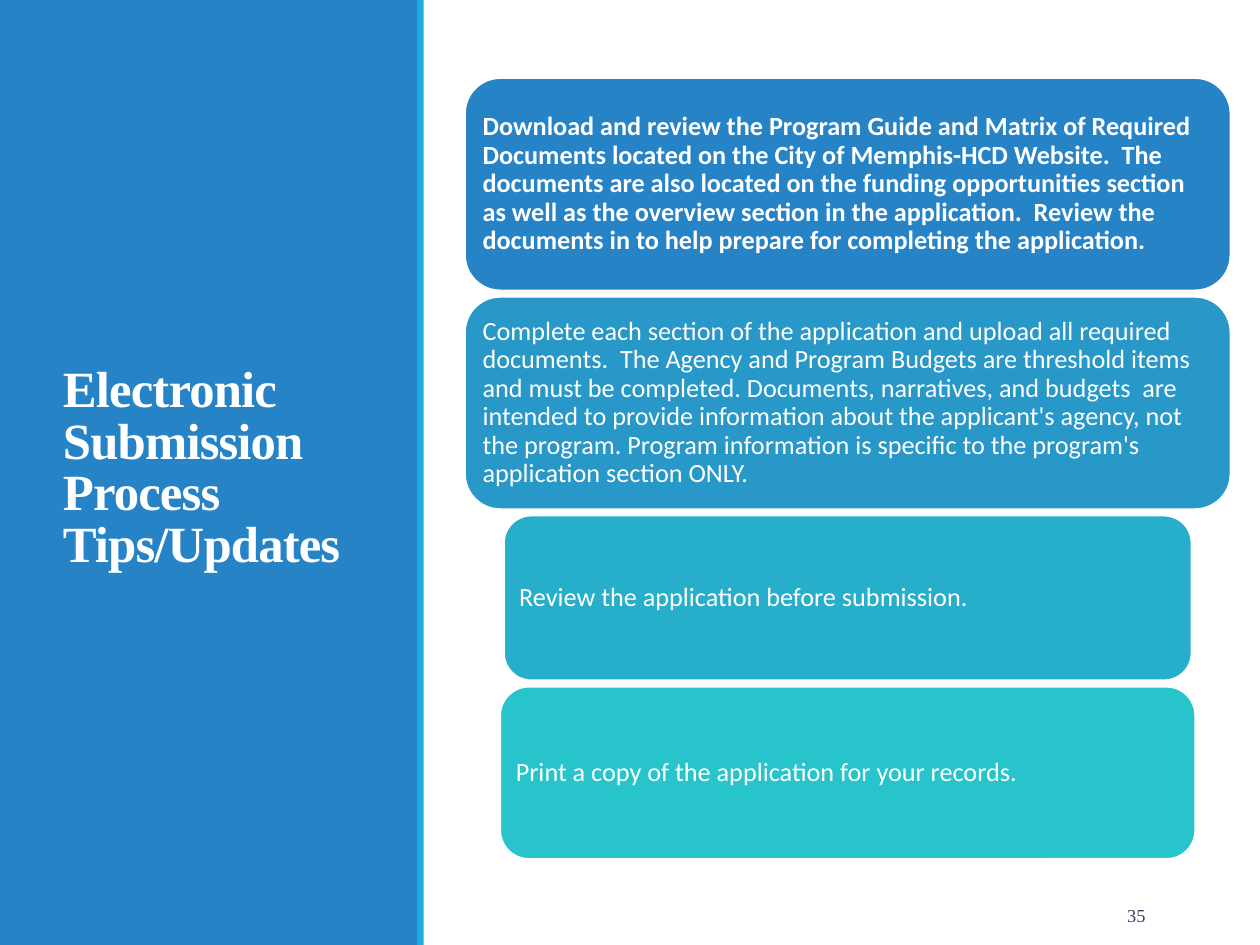
from pptx import Presentation
from pptx.dml.color import RGBColor
from pptx.enum.shapes import MSO_SHAPE
from pptx.enum.text import MSO_ANCHOR, PP_ALIGN
from pptx.util import Cm, Pt

RECTANGLE = MSO_SHAPE.RECTANGLE
ROUNDED = MSO_SHAPE.ROUNDED_RECTANGLE
MIDDLE = MSO_ANCHOR.MIDDLE
LEFT, RIGHT = PP_ALIGN.LEFT, PP_ALIGN.RIGHT

COLOURS = {
    "white": "FFFFFF",
    "panel": "2683C6",
    "stripe": "1CADE4",
    "number": "344068",
    "step1": "2683C6",
    "step2": "2798C8",
    "step3": "27AECA",
    "step4": "28C4CC",
}
SERIF, SANS = "Times New Roman", "Calibri"

# Steps: width, height, bold, text
STEPS = [
    (15.44, 4.29, True,
     "Download and review the Program Guide and Matrix of Required Documents "
     "located on the City of Memphis-HCD Website.  The documents are also "
     "located on the funding opportunities section as well as the overview "
     "section in the application.  Review the documents in to help prepare "
     "for completing the application."),
    (15.44, 4.29, False,
     "Complete each section of the application and upload all required "
     "documents.  The Agency and Program Budgets are threshold items and must "
     "be completed. Documents, narratives, and budgets  are intended to "
     "provide information about the applicant's agency, not the program. "
     "Program information is specific to the program's application section "
     "ONLY."),
    (13.87, 3.33, False, "Review the application before submission."),
    (14.02, 3.48, False, "Print a copy of the application for your records."),
]
STEP_CENTRE, STEP_TOP, STEP_GAP = 17.09, 1.57, 0.12


class SlideBuilder:
    def __init__(self, page):
        self.page = page

    def colour(self, name):
        return RGBColor.from_string(COLOURS[name])

    def shape(self, kind, left, top, width, height, fill, outline=None):
        box = self.page.shapes.add_shape(
            kind, Cm(left), Cm(top), Cm(width), Cm(height))
        box.shadow.inherit = False
        box.fill.solid()
        box.fill.fore_color.rgb = self.colour(fill)
        if outline:
            box.line.color.rgb = self.colour(outline)
            box.line.width = Pt(1.25)
        else:
            box.line.fill.background()
        return box

    def text_box(self, left, top, width, height):
        return self.page.shapes.add_textbox(
            Cm(left), Cm(top), Cm(width), Cm(height))

    def add_text(self, box, text, font, size, colour, bold=False, align=LEFT,
                 line_spacing=1.0, inset=None):
        frame = box.text_frame
        frame.word_wrap = True
        frame.vertical_anchor = MIDDLE
        if inset is not None:
            frame.margin_left = frame.margin_right = Cm(inset)
            frame.margin_top = frame.margin_bottom = Cm(inset)
        para = frame.paragraphs[0]
        para.alignment = align
        para.line_spacing = line_spacing
        span = para.add_run()
        span.text = text
        span.font.name = font
        span.font.size = Pt(size)
        span.font.bold = bold
        span.font.color.rgb = self.colour(colour)
        return span


def main():
    deck = Presentation()
    deck.slide_width, deck.slide_height = Cm(25.4), Cm(19.05)
    builder = SlideBuilder(deck.slides.add_slide(deck.slide_layouts[6]))

    # Left panel with title
    builder.shape(RECTANGLE, 0, 0, 8.43, 19.05, "panel")
    title = builder.add_text(
        builder.text_box(1.02, 1.45, 6.43, 16.03),
        "Electronic Submission Process Tips/Updates",
        SERIF, 29, "white", bold=True, line_spacing=0.85)
    # Tighter letter spacing, in hundredths of a point
    title._r.get_or_add_rPr().set("spc", "-50")
    builder.shape(RECTANGLE, 8.41, 0, 0.13, 19.05, "stripe")

    # Slide number
    builder.add_text(builder.text_box(21.08, 17.93, 2.26, 1.02),
                     "35", SERIF, 10.5, "number", align=RIGHT)

    # Stacked steps, centred on one axis
    top = STEP_TOP
    for number, (width, height, bold, text) in enumerate(STEPS, 1):
        box = builder.shape(ROUNDED, STEP_CENTRE - width / 2, top, width,
                            height, f"step{number}", outline="white")
        builder.add_text(box, text, SANS, 15, "white", bold=bold,
                         line_spacing=0.9, inset=0.15)
        top += height + STEP_GAP

    deck.save("out.pptx")


if __name__ == "__main__":
    main()
